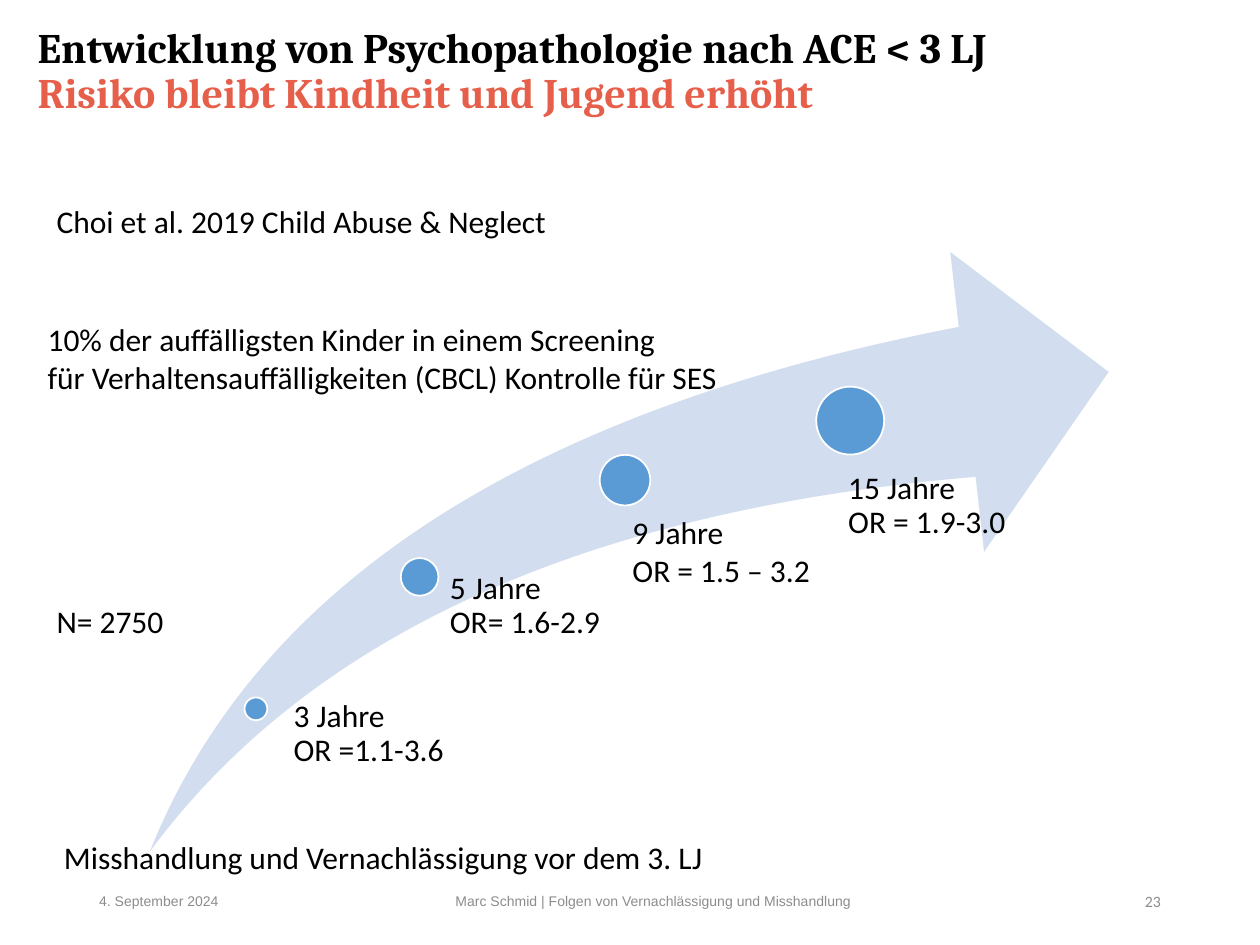
from dataclasses import dataclass

from pptx import Presentation
from pptx.dml.color import RGBColor
from pptx.enum.shapes import MSO_SHAPE
from pptx.enum.text import MSO_ANCHOR, PP_ALIGN
from pptx.util import Cm, Pt


@dataclass(frozen=True)
class Theme:
    ink: str = "000000"
    accent: str = "E65F4B"
    arrow: str = "D2DEEF"
    dot: str = "5B9BD5"
    dot_line: str = "FFFFFF"
    muted: str = "8C8C8C"
    heading_font: str = "Cambria"
    body_font: str = "Calibri"
    footer_font: str = "Arial"
    title_size: int = 24
    body_size: int = 18
    number_size: int = 9
    footer_size: int = 8


THEME = Theme()


@dataclass(frozen=True)
class Box:
    """A rectangle in centimetres."""
    left: float
    top: float
    width: float
    height: float

    def lengths(self) -> tuple:
        return Cm(self.left), Cm(self.top), Cm(self.width), Cm(self.height)


@dataclass(frozen=True)
class Label:
    box: Box
    lines: tuple
    inset_left: float = 0.25
    inset_top: float = 0.13
    line_spacing: object = 1.0
    wrap: bool = True
    anchor: object = MSO_ANCHOR.TOP
    alignment: object = PP_ALIGN.LEFT
    font: str = THEME.body_font
    size: int = THEME.body_size
    color: str = THEME.ink


@dataclass(frozen=True)
class Milestone:
    """A dot on the arrow, given by centre and diameter, with its label."""
    center_x: float
    center_y: float
    diameter: float
    label: Label


MILESTONES = (
    Milestone(5.16, 14.29, 0.46, Label(
        Box(5.69, 14.12, 4.17, 2.87), ("3 Jahre", "OR =1.1-3.6"), 0.23, 0, 0.9)),
    Milestone(8.46, 11.63, 0.76, Label(
        Box(8.66, 11.53, 4.06, 5.51), ("5 Jahre", "OR= 1.6-2.9"), 0.41, 0, 0.9)),
    Milestone(12.6, 9.68, 1.02, Label(
        Box(12.5, 10.21, 4.14, 1.8), ("9 Jahre", "OR = 1.5 – 3.2"),
        line_spacing=Pt(21.6), wrap=False)),
    Milestone(17.14, 8.48, 1.37, Label(
        Box(16.36, 9.53, 5.61, 6.6), ("15 Jahre", "OR = 1.9-3.0"), 0.74, 0, 0.9)),
)

FOOTER = {"anchor": MSO_ANCHOR.MIDDLE, "color": THEME.muted,
          "font": THEME.footer_font, "size": THEME.footer_size}
NUMBER = FOOTER | {"font": THEME.body_font, "size": THEME.number_size}

NOTES = (
    Label(Box(1.75, 17.65, 5.72, 1.02), ("4. September 2024",), **FOOTER),
    Label(Box(8.41, 17.65, 9.53, 1.02),
          ("Marc Schmid | Folgen von Vernachlässigung und Misshandlung",),
          alignment=PP_ALIGN.CENTER, **FOOTER),
    Label(Box(17.93, 17.65, 5.72, 1.02), ("23",), alignment=PP_ALIGN.RIGHT, **NUMBER),
    Label(Box(0.71, 6.32, 22.2, 1.8),
          ("10% der auffälligsten Kinder in einem Screening",
           "für Verhaltensauffälligkeiten (CBCL) Kontrolle für SES")),
    Label(Box(0.89, 3.94, 10.67, 1.02),
          ("Choi et al. 2019 Child Abuse & Neglect",), wrap=False),
    Label(Box(0.89, 12.01, 2.84, 1.02), ("N= 2750",), wrap=False),
    Label(Box(1.04, 16.76, 20.04, 1.02),
          ("Misshandlung und Vernachlässigung vor dem 3. LJ",)),
)


def apply(target: object, values: dict) -> None:
    for name, value in values.items():
        setattr(target, name, value)


def format_font(font: object, name: str, size: int, color: str, bold: bool = False) -> None:
    apply(font, {"name": name, "size": Pt(size), "bold": bold})
    font.color.rgb = RGBColor.from_string(color)


def add_title(slide: object) -> None:
    title = slide.shapes.title
    box = Box(0.51, 0.05, 27.81, 3.68)
    apply(title, dict(zip(("left", "top", "width", "height"), box.lengths())))
    frame = title.text_frame
    apply(frame, {"vertical_anchor": MSO_ANCHOR.TOP, "word_wrap": True,
                  "margin_left": Cm(0.25), "margin_top": Cm(0.5)})
    paragraph = frame.paragraphs[0]
    apply(paragraph, {"alignment": PP_ALIGN.LEFT, "line_spacing": 0.9})
    first = paragraph.add_run()
    first.text = "Entwicklung von Psychopathologie nach ACE < 3 LJ"
    paragraph.add_line_break()
    second = paragraph.add_run()
    second.text = "Risiko bleibt Kindheit und Jugend erhöht"
    for run, color in ((first, THEME.ink), (second, THEME.accent)):
        format_font(run.font, THEME.heading_font, THEME.title_size, color, bold=True)


def add_filled_shape(slide: object, kind: object, box: Box, color: str) -> object:
    shape = slide.shapes.add_shape(kind, *box.lengths())
    shape.shadow.inherit = False
    shape.fill.solid()
    shape.fill.fore_color.rgb = RGBColor.from_string(color)
    shape.line.fill.background()
    return shape


def add_arrow(slide: object) -> None:
    arrow = add_filled_shape(slide, MSO_SHAPE.SWOOSH_ARROW,
                             Box(3.02, 5.08, 19.33, 12.09), THEME.arrow)
    for index in range(2):
        arrow.adjustments[index] = 0.25


def add_label(slide: object, label: Label) -> None:
    frame = slide.shapes.add_textbox(*label.box.lengths()).text_frame
    apply(frame, {"word_wrap": label.wrap, "vertical_anchor": label.anchor,
                  "margin_left": Cm(label.inset_left), "margin_top": Cm(label.inset_top)})
    frame.text = "\n".join(label.lines)
    for paragraph in frame.paragraphs:
        apply(paragraph, {"alignment": label.alignment, "line_spacing": label.line_spacing})
        format_font(paragraph.runs[0].font, label.font, label.size, label.color)


def add_milestone(slide: object, milestone: Milestone) -> None:
    diameter = milestone.diameter
    box = Box(milestone.center_x - diameter / 2, milestone.center_y - diameter / 2,
              diameter, diameter)
    dot = add_filled_shape(slide, MSO_SHAPE.OVAL, box, THEME.dot)
    dot.line.color.rgb = RGBColor.from_string(THEME.dot_line)
    dot.line.width = Pt(1)
    add_label(slide, milestone.label)


def main() -> None:
    presentation = Presentation()
    apply(presentation, {"slide_width": Cm(25.4), "slide_height": Cm(19.05)})
    title_only = presentation.slide_layouts.get_by_name("Title Only")
    slide = presentation.slides.add_slide(title_only)
    add_title(slide)
    add_arrow(slide)
    for milestone in MILESTONES:
        add_milestone(slide, milestone)
    for note in NOTES:
        add_label(slide, note)
    presentation.save("out.pptx")


if __name__ == "__main__":
    main()
